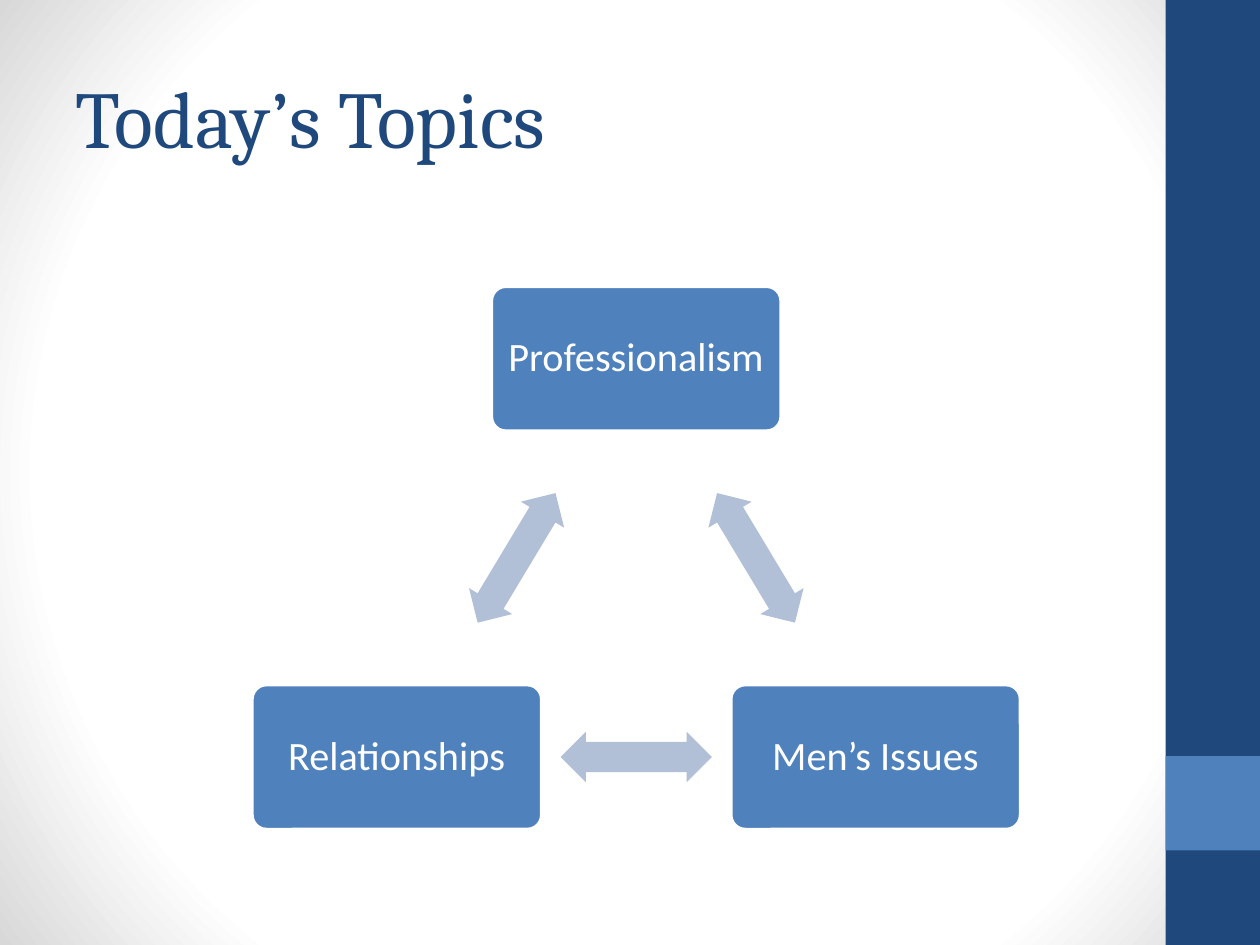
import math

from lxml import etree
from pptx import Presentation
from pptx.dml.color import RGBColor
from pptx.enum.shapes import MSO_SHAPE
from pptx.enum.text import MSO_ANCHOR, PP_ALIGN
from pptx.oxml import parse_xml
from pptx.oxml.ns import nsdecls, qn
from pptx.util import Pt

RECT = MSO_SHAPE.RECTANGLE
ROUND_RECT = MSO_SHAPE.ROUNDED_RECTANGLE
DOUBLE_ARROW = MSO_SHAPE.LEFT_RIGHT_ARROW
MIDDLE = MSO_ANCHOR.MIDDLE
LEFT, CENTER = PP_ALIGN.LEFT, PP_ALIGN.CENTER

NAVY = RGBColor(0x1F, 0x49, 0x7D)
BLUE = RGBColor(0x4F, 0x81, 0xBD)
PALE = RGBColor(0xB1, 0xC0, 0xD7)
WHITE = RGBColor(0xFF, 0xFF, 0xFF)
GRAY = RGBColor(0xD8, 0xD8, 0xD8)

TITLE_FONT = {"name": "Cambria", "size": Pt(46)}
NODE_FONT = {"name": "Calibri", "size": Pt(23)}
TITLE_FRAME = {"vertical_anchor": MIDDLE, "word_wrap": True}
NODE_FRAME = {"vertical_anchor": MIDDLE, "word_wrap": False,
              "margin_left": Pt(7.2), "margin_right": Pt(7.2),
              "margin_top": Pt(7.2), "margin_bottom": Pt(7.2)}

NODE_W, NODE_H = 165.6, 82.8
ARROW_W, ARROW_H = 86.4, 28.8


def set_attrs(obj, values):
    for name, value in values.items():
        setattr(obj, name, value)


def add_text(sp, text, frame, font, color, align):
    tf = sp.text_frame
    set_attrs(tf, frame)
    p = tf.paragraphs[0]
    p.alignment = align
    r = p.add_run()
    r.text = text
    set_attrs(r.font, font)
    r.font.color.rgb = color
    return p


def add_block(s, kind, box, fill):
    sp = s.shapes.add_shape(kind, *map(Pt, box))
    sp.shadow.inherit = False
    sp.fill.solid()
    sp.fill.fore_color.rgb = fill
    sp.line.fill.background()
    return sp


def paint_background(s):
    s.background.fill.gradient()
    old = next(s._element.iter(qn("a:gradFill")))
    grad = parse_xml(
        f'<a:gradFill {nsdecls("a")} rotWithShape="1"><a:gsLst/>'
        '<a:path path="circle">'
        '<a:fillToRect l="50000" t="50000" r="50000" b="50000"/>'
        '</a:path></a:gradFill>')
    for pos, color in ((0, WHITE), (75, WHITE), (100, GRAY)):
        gs = etree.SubElement(grad[0], qn("a:gs"), pos=str(pos * 1000))
        etree.SubElement(gs, qn("a:srgbClr"), val=str(color))
    old.getparent().replace(old, grad)


def add_sidebar(s, box):
    left, top, width, height = box
    add_block(s, RECT, box, NAVY)
    add_block(s, RECT, (left, top + 0.8 * height, width, width), BLUE)


def add_title(s, box, text):
    sp = s.shapes.title
    set_attrs(sp, dict(zip(("left", "top", "width", "height"), map(Pt, box))))
    add_text(sp, text, TITLE_FRAME, TITLE_FONT, NAVY, LEFT)


def add_node(s, center, text):
    x, y = center
    box = (x - NODE_W / 2, y - NODE_H / 2, NODE_W, NODE_H)
    sp = add_block(s, ROUND_RECT, box, BLUE)
    sp.adjustments[0] = 0.1
    sp.line.color.rgb = WHITE
    sp.line.width = Pt(2)
    p = add_text(sp, text, NODE_FRAME, NODE_FONT, WHITE, CENTER)
    p.line_spacing = 0.9


def add_arrow(s, start, end):
    x, y = ((a + b) / 2 for a, b in zip(start, end))
    box = (x - ARROW_W / 2, y - ARROW_H / 2, ARROW_W, ARROW_H)
    sp = add_block(s, DOUBLE_ARROW, box, PALE)
    sp.adjustments[0] = 0.6
    sp.adjustments[1] = 0.5
    angle = math.atan2(end[1] - start[1], end[0] - start[0])
    sp.rotation = round(math.degrees(angle)) % 360


def add_cycle(s, box, topics):
    left, top, width, height = box
    low = top + height - NODE_H / 2
    centers = [(left + width / 2, top + NODE_H / 2),
               (left + width - NODE_W / 2, low),
               (left + NODE_W / 2, low)]
    for i, (center, topic) in enumerate(zip(centers, topics)):
        add_node(s, center, topic)
        add_arrow(s, center, centers[(i + 1) % len(centers)])


def main():
    prs = Presentation()
    prs.slide_width, prs.slide_height = Pt(720), Pt(540)
    s = prs.slides.add_slide(prs.slide_layouts[5])
    paint_background(s)
    add_sidebar(s, (666, 0, 54, 540))
    add_title(s, (36, 21.6, 600, 90), "Today’s Topics")
    add_cycle(s, (144, 163.6, 439.2, 310.4),
              ["Professionalism", "Men’s Issues", "Relationships"])
    prs.save("out.pptx")


if __name__ == "__main__":
    main()
